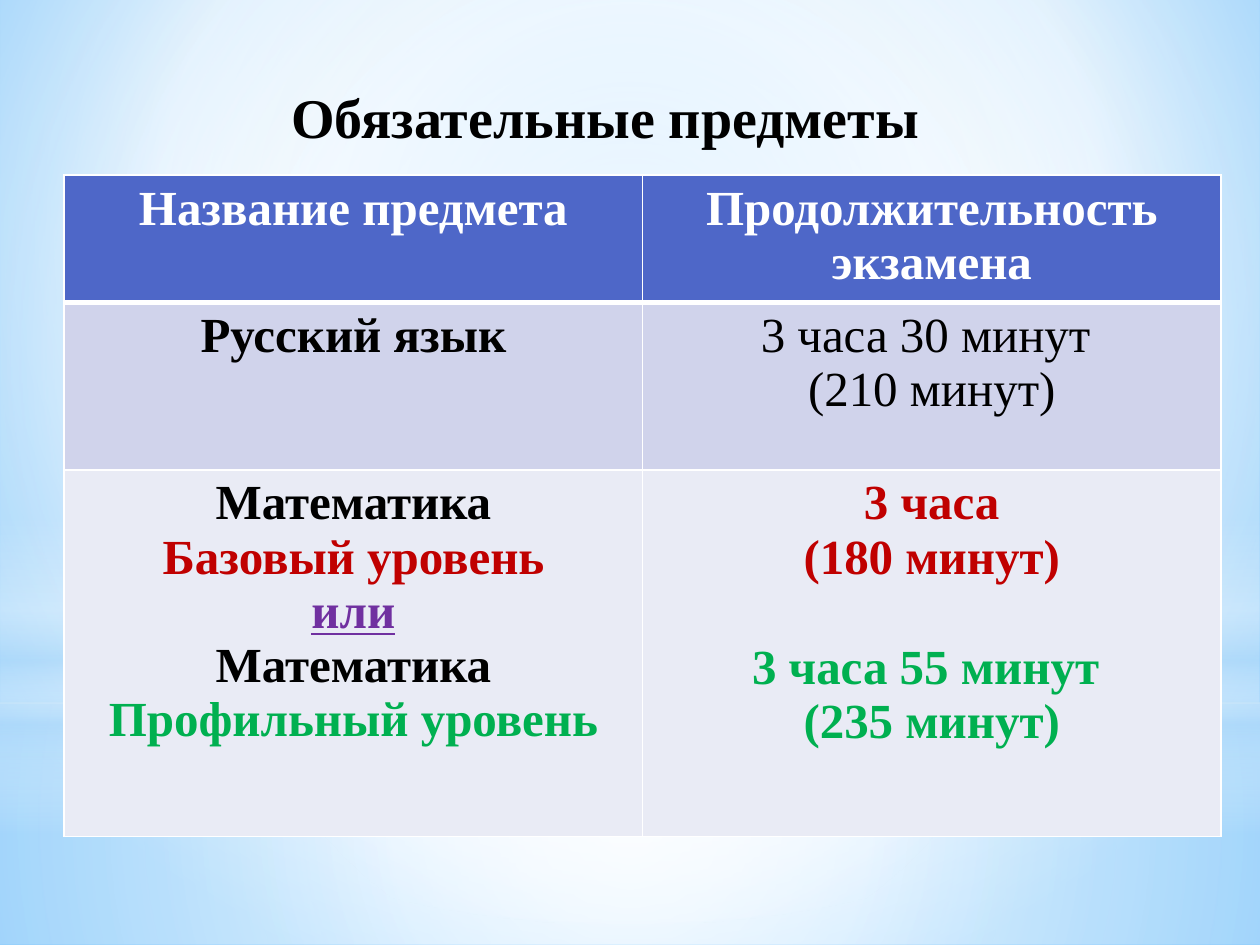
from pptx import Presentation, oxml, util as u
from pptx.dml.color import RGBColor
from pptx.enum import shapes, text
from pptx.oxml import ns

FONT = "Times New Roman"
BLACK = RGBColor(0x00, 0x00, 0x00)
WHITE = RGBColor(0xFF, 0xFF, 0xFF)
RED = RGBColor(0xC0, 0x00, 0x00)
PURPLE = RGBColor(0x70, 0x30, 0xA0)
GREEN = RGBColor(0x00, 0xB0, 0x50)
SKY = RGBColor(0x9E, 0xD5, 0xFF)
DEEP_SKY = RGBColor(0x5B, 0xB9, 0xFF)
PALE_BLUE = RGBColor(0xB4, 0xDC, 0xFA)
ROW_FILLS = [RGBColor(0x4E, 0x67, 0xC8), RGBColor(0xD0, 0xD3, 0xEB), RGBColor(0xE9, 0xEB, 0xF5)]

TITLE = "Обязательные предметы"
LINE_GAP = 32
CELLS = [
    [
        [([("Название предмета", WHITE, True)], 0)],
        [([("Продолжительность экзамена", WHITE, True)], 0)],
    ],
    [
        [([("Русский язык", BLACK, True)], 0)],
        [([("3 часа 30 минут ", BLACK, False)], 0), ([("(210 минут)", BLACK, False)], 0)],
    ],
    [
        [
            ([("Математика", BLACK, True)], 0),
            ([("Базовый уровень", RED, True)], 0),
            ([("или", PURPLE, True)], 0),
            ([("Математика ", BLACK, True), ("Профильный уровень", GREEN, True)], 0),
        ],
        [
            ([("3 часа", RED, True)], 0),
            ([("(180 минут)", RED, True)], 0),
            ([("3 часа 55 минут ", GREEN, True)], LINE_GAP),
            ([("(235 минут)", GREEN, True)], 0),
        ],
    ],
]
COLUMN_WIDTH = 4.59
ROW_HEIGHTS = [1.01, 1.33, 2.91]

CENTER = (50, 50, 50, 50)
BACKGROUND = [(0, SKY, 100), (60, WHITE, 100), (100, DEEP_SKY, 100)]
LAYERS = [
    ("RECTANGLE", 5.58, 1.92, [(0, WHITE, 91), (37, WHITE, 76), (100, PALE_BLUE, 79)], CENTER),
    ("RECTANGLE", 0, 5.58, [(0, WHITE, 89), (48, WHITE, 62), (100, PALE_BLUE, 79)], CENTER),
    ("RECTANGLE", 4.12, 2.5, [(0, WHITE, 0), (29, WHITE, 30), (45, PALE_BLUE, 40),
                             (55, WHITE, 26), (65, PALE_BLUE, 60), (100, WHITE, 0)], None),
    ("OVAL", 1.75, 5.58, [(0, WHITE, 100), (56, WHITE, 0)], CENTER),
]


def apply_gradient(fill, element, stops, focus):
    fill.solid()
    fill.fore_color.rgb = WHITE
    stop_xml = "".join(
        f'<a:gs pos="{position * 1000}"><a:srgbClr val="{color}">'
        f'<a:alpha val="{opacity * 1000}"/></a:srgbClr></a:gs>'
        for position, color, opacity in stops
    )
    if focus:
        sides = " ".join(f'{side}="{value * 1000}"' for side, value in zip("ltrb", focus))
        direction = f'<a:path path="circle"><a:fillToRect {sides}/></a:path>'
    else:
        direction = '<a:lin ang="5400000" scaled="0"/>'
    gradient = oxml.parse_xml(
        f'<a:gradFill {ns.nsdecls("a")} rotWithShape="1"><a:gsLst>{stop_xml}</a:gsLst>{direction}</a:gradFill>'
    )
    solid = next(element.iter(ns.qn("a:solidFill")))
    solid.getparent().replace(solid, gradient)


def add_run(paragraph, words, color, bold, size):
    run = paragraph.add_run()
    run.text = words
    run.font.name = FONT
    run.font.size = u.Pt(size)
    run.font.bold = bold
    run.font.underline = color == PURPLE
    run.font.color.rgb = color


def set_borders(cell, top, bottom):
    properties = cell._tc.get_or_add_tcPr()
    for index, (side, width) in enumerate([("L", 1), ("R", 1), ("T", top), ("B", bottom)]):
        border = oxml.parse_xml(
            f'<a:ln{side} {ns.nsdecls("a")} w="{u.Pt(width)}"><a:solidFill>'
            f'<a:srgbClr val="{WHITE}"/></a:solidFill></a:ln{side}>'
        )
        properties.insert(index, border)


def fill_cell(cell, paragraphs):
    for index, (runs, gap) in enumerate(paragraphs):
        paragraph = cell.text_frame.paragraphs[0] if index == 0 else cell.text_frame.add_paragraph()
        paragraph.alignment = text.PP_ALIGN.CENTER
        paragraph.space_before = u.Pt(gap)
        for words, color, bold in runs:
            add_run(paragraph, words, color, bold, 28)


def main():
    presentation = Presentation()
    presentation.slide_width, presentation.slide_height = u.Inches(10), u.Inches(7.5)
    slide = presentation.slides.add_slide(presentation.slide_layouts[5])
    apply_gradient(slide.background.fill, slide.element, BACKGROUND, (20, 10, 20, 60))

    for preset, top, height, stops, focus in LAYERS:
        shape = slide.shapes.add_shape(
            shapes.MSO_SHAPE[preset], 0, u.Inches(top), presentation.slide_width, u.Inches(height)
        )
        shape.shadow.inherit = False
        shape.line.fill.background()
        apply_gradient(shape.fill, shape.element, stops, focus)

    title = slide.shapes.title
    title.left, title.top, title.width, title.height = map(u.Inches, (1.3, 0.6, 7.01, 0.64))
    paragraph = title.text_frame.paragraphs[0]
    paragraph.alignment = text.PP_ALIGN.CENTER
    add_run(paragraph, TITLE, BLACK, True, 32)
    slide.shapes.element.append(title.element)

    table = slide.shapes.add_table(
        len(CELLS), 2, u.Inches(0.51), u.Inches(1.39),
        u.Inches(2 * COLUMN_WIDTH), u.Inches(sum(ROW_HEIGHTS)),
    ).table
    for row_index, row in enumerate(CELLS):
        table.rows[row_index].height = u.Inches(ROW_HEIGHTS[row_index])
        for column_index, paragraphs in enumerate(row):
            cell = table.cell(row_index, column_index)
            cell.fill.solid()
            cell.fill.fore_color.rgb = ROW_FILLS[row_index]
            set_borders(cell, 3 if row_index == 1 else 1, 3 if row_index == 0 else 1)
            fill_cell(cell, paragraphs)

    presentation.save("out.pptx")


if __name__ == "__main__":
    main()
